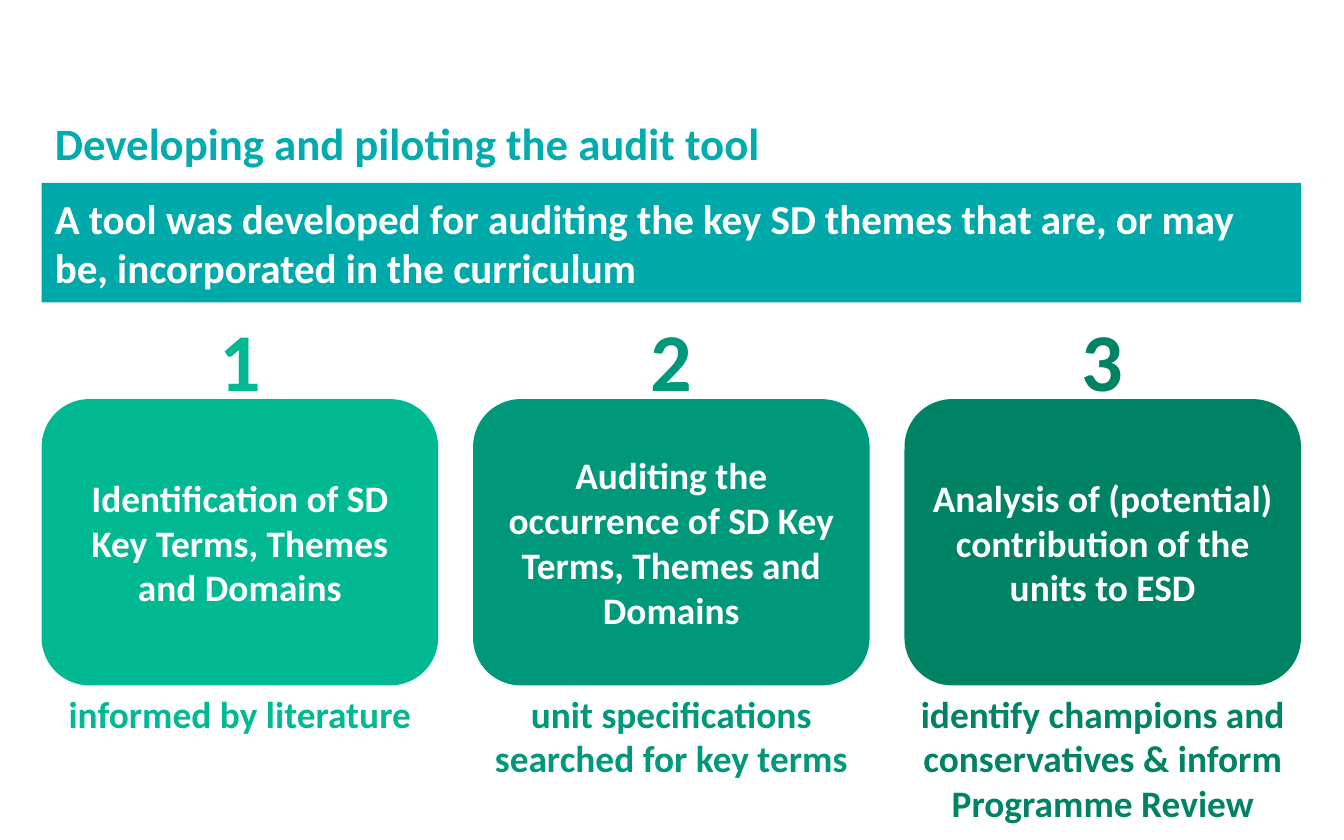
from pptx import Presentation
from pptx.dml.color import RGBColor
from pptx.enum.shapes import MSO_SHAPE
from pptx.enum.text import MSO_ANCHOR, PP_ALIGN
from pptx.util import Pt

PX = 9144
FONT = "Calibri"
WHITE = "FFFFFF"

TITLE = "Developing and piloting the audit tool"
SUMMARY = ("A tool was developed for auditing the key SD themes that are, "
           "or may be, incorporated in the curriculum")
STEPS = [
    ("Identification of SD Key Terms, Themes and Domains",
     "informed by literature", "00B891", 280, 44),
    ("Auditing the occurrence of SD Key Terms, Themes and Domains",
     "unit specifications searched for key terms", "00987A", 287, 77),
    ("Analysis of (potential) contribution of the units to ESD",
     "identify champions and conservatives & inform Programme Review", "008265", 339, 111),
]

LEFT, WIDTH = 31, 937
CARD_TOP, CARD_WIDTH, CARD_HEIGHT = 297, 295, 213
NUMBER_TOP, NUMBER_WIDTH, NUMBER_HEIGHT = 225, 51, 84
CAPTION_TOP = 509
PITCH = (WIDTH - CARD_WIDTH) / (len(STEPS) - 1)


def color(value):
    return RGBColor.from_string(value)


def emu(*lengths):
    return [round(length * PX) for length in lengths]


def write(box, text, size, ink, align=PP_ALIGN.LEFT, anchor=MSO_ANCHOR.TOP):
    frame = box.text_frame
    frame.word_wrap = True
    frame.vertical_anchor = anchor
    para = frame.paragraphs[0]
    para.text = text
    para.alignment = align
    para.font.name = FONT
    para.font.size = Pt(size)
    para.font.bold = True
    para.font.color.rgb = color(ink)
    return para


def add_text(page, place, *style):
    return write(page.shapes.add_textbox(*emu(*place)), *style)


def add_panel(page, kind, place, fill, *style):
    panel = page.shapes.add_shape(kind, *emu(*place))
    panel.shadow.inherit = False
    panel.fill.solid()
    panel.fill.fore_color.rgb = color(fill)
    panel.line.fill.background()
    write(panel, *style)


def add_step(page, index, step):
    label, caption, shade, caption_width, caption_height = step
    left = LEFT + index * PITCH
    middle = left + CARD_WIDTH / 2
    add_panel(page, MSO_SHAPE.ROUNDED_RECTANGLE,
              (left, CARD_TOP, CARD_WIDTH, CARD_HEIGHT), shade,
              label, 20, WHITE, PP_ALIGN.CENTER, MSO_ANCHOR.MIDDLE)
    add_text(page, (middle - NUMBER_WIDTH / 2, NUMBER_TOP, NUMBER_WIDTH, NUMBER_HEIGHT),
             str(index + 1), 44, shade, PP_ALIGN.CENTER)
    add_text(page, (middle - caption_width / 2, CAPTION_TOP, caption_width, caption_height),
             caption, 20, shade, PP_ALIGN.CENTER)


def main():
    deck = Presentation()
    deck.slide_width, deck.slide_height = emu(1000, 625)
    page = deck.slides.add_slide(deck.slide_layouts[6])
    title = add_text(page, (LEFT, 86, 862, 46), TITLE, 24, "00ACAF",
                     PP_ALIGN.LEFT, MSO_ANCHOR.MIDDLE)
    title.line_spacing = 0.9
    add_panel(page, MSO_SHAPE.RECTANGLE, (LEFT, 136, WIDTH, 89), "00A9A9",
              SUMMARY, 22, WHITE, PP_ALIGN.LEFT, MSO_ANCHOR.MIDDLE)
    for index, step in enumerate(STEPS):
        add_step(page, index, step)
    deck.save("out.pptx")


if __name__ == "__main__":
    main()
